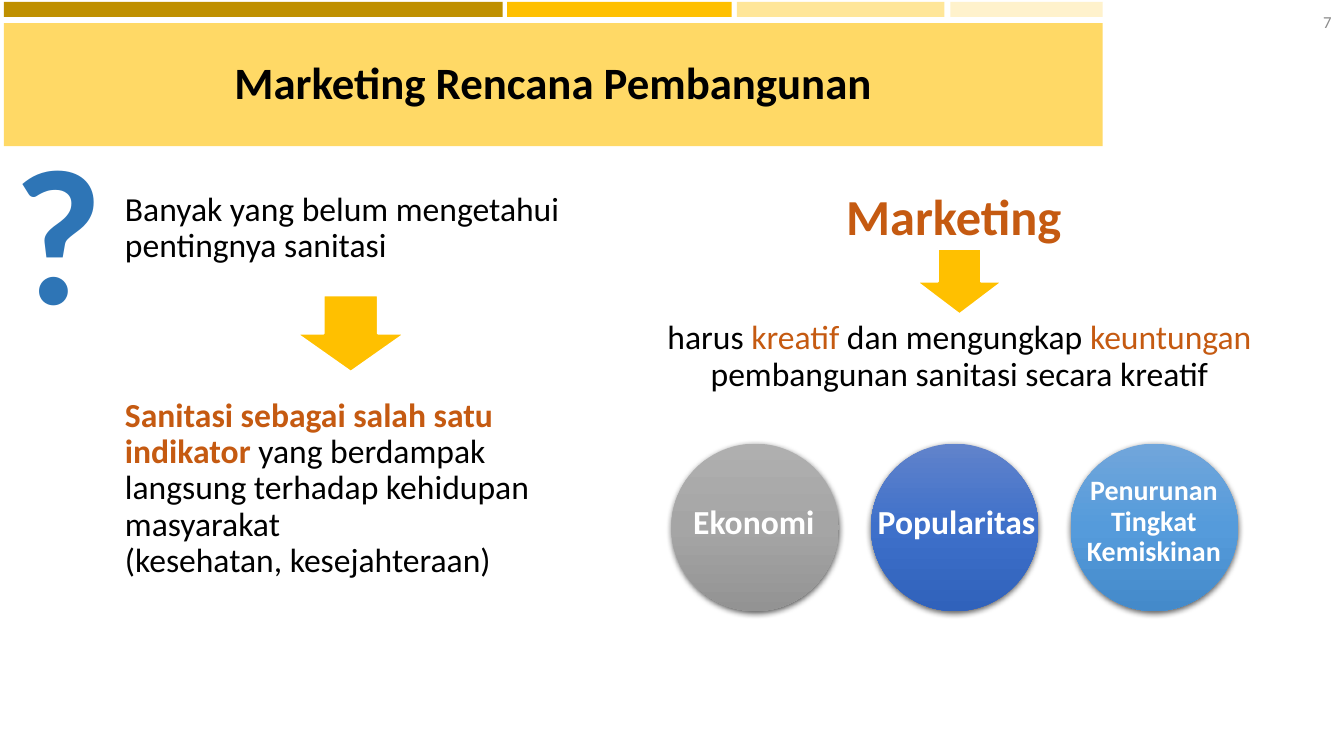
from dataclasses import dataclass

from lxml import etree
from pptx import Presentation
from pptx.dml.color import RGBColor
from pptx.enum.shapes import MSO_SHAPE
from pptx.enum.text import MSO_ANCHOR, MSO_AUTO_SIZE, PP_ALIGN
from pptx.oxml.ns import qn
from pptx.shapes.autoshape import Shape
from pptx.slide import Slide
from pptx.text.text import TextFrame
from pptx.util import Cm, Pt

RECTANGLE, ELLIPSE, DOWN_ARROW = MSO_SHAPE.RECTANGLE, MSO_SHAPE.OVAL, MSO_SHAPE.DOWN_ARROW
LEFT, CENTER, RIGHT = PP_ALIGN.LEFT, PP_ALIGN.CENTER, PP_ALIGN.RIGHT
TOP, MIDDLE = MSO_ANCHOR.TOP, MSO_ANCHOR.MIDDLE
FIXED_SIZE = MSO_AUTO_SIZE.NONE

FONT = "Calibri"
BLACK = RGBColor(0x00, 0x00, 0x00)
WHITE = RGBColor(0xFF, 0xFF, 0xFF)
GREY = RGBColor(0x8C, 0x8C, 0x8C)
BLUE = RGBColor(0x2E, 0x75, 0xB6)
ORANGE = RGBColor(0xC5, 0x5A, 0x11)
DARK_GOLD = RGBColor(0xBF, 0x90, 0x00)
GOLD = RGBColor(0xFF, 0xC0, 0x00)
SOFT_GOLD = RGBColor(0xFF, 0xD9, 0x66)
PALE_GOLD = RGBColor(0xFF, 0xE6, 0x99)
CREAM = RGBColor(0xFF, 0xF2, 0xCC)
GREYS = (RGBColor(0xAF, 0xAF, 0xAF), RGBColor(0xA5, 0xA5, 0xA5), RGBColor(0x93, 0x93, 0x93))
ROYAL_BLUES = (RGBColor(0x61, 0x83, 0xCB), RGBColor(0x3E, 0x70, 0xCA), RGBColor(0x30, 0x62, 0xBB))
SKY_BLUES = (RGBColor(0x71, 0xA6, 0xDB), RGBColor(0x55, 0x9B, 0xDB), RGBColor(0x44, 0x8A, 0xCA))


@dataclass(frozen=True)
class Box:
    left: float
    top: float
    width: float
    height: float


@dataclass(frozen=True)
class Phrase:
    text: str
    size: float = 24
    color: RGBColor = BLACK
    bold: bool = False


@dataclass(frozen=True)
class Line:
    phrases: tuple[Phrase, ...]
    align: PP_ALIGN = LEFT
    space_before: float = 0
    spacing: float = 0.9


@dataclass(frozen=True)
class Passage:
    box: Box
    lines: tuple[Line, ...]
    anchor: MSO_ANCHOR = TOP
    wrap: bool = True


@dataclass(frozen=True)
class Stripe:
    left: float
    width: float
    color: RGBColor


@dataclass(frozen=True)
class Benefit:
    label: Phrase
    label_box: Box
    align: PP_ALIGN
    shades: tuple[RGBColor, RGBColor, RGBColor]


TITLE_BOX = Box(0.1, 0.58, 27.69, 3.1)
TITLE = Line((Phrase("Marketing Rencana Pembangunan", 32, BLACK, True),), CENTER)

STRIPE_TOP, STRIPE_HEIGHT = 0.05, 0.38
STRIPES = (
    Stripe(0.1, 12.57, DARK_GOLD),
    Stripe(12.78, 5.66, GOLD),
    Stripe(18.57, 5.23, PALE_GOLD),
    Stripe(23.95, 3.84, CREAM),
)

PASSAGES = (
    Passage(Box(26.19, 0.05, 7.62, 1.02),
            (Line((Phrase("7", 12, GREY),), RIGHT, spacing=1),), MIDDLE),
    Passage(Box(2.9, 4.72, 11.91, 2.11),
            (Line((Phrase("Banyak yang belum mengetahui pentingnya sanitasi"),)),)),
    Passage(Box(0.1, 2.69, 2.79, 6.15),
            (Line((Phrase("?", 138, BLUE, True),), spacing=1),), wrap=False),
    Passage(Box(2.9, 9.91, 11.91, 4.88), (
        Line((Phrase("Sanitasi sebagai salah satu indikator ", color=ORANGE, bold=True),
              Phrase("yang berdampak langsung terhadap kehidupan masyarakat"))),
        Line((Phrase("(kesehatan, kesejahteraan)"),)),
    )),
    Passage(Box(15.24, 4.72, 17.88, 5.69), (
        Line((Phrase("Marketing ", 36, ORANGE, True),), CENTER),
        Line((Phrase("harus "), Phrase("kreatif ", color=ORANGE),
              Phrase("dan mengungkap "), Phrase("keuntungan ", color=ORANGE),
              Phrase("pembangunan sanitasi secara kreatif")), CENTER, space_before=53),
    )),
)

ARROWS = (Box(7.47, 7.44, 2.74, 1.93), Box(23.09, 6.27, 2.18, 1.65))

CIRCLE_LEFT, CIRCLE_TOP, CIRCLE_SIZE, CIRCLE_STEP = 16.92, 11.18, 4.22, 5.03
BENEFITS = (
    Benefit(Phrase("Ekonomi", 24, WHITE, True), Box(17.22, 12.6, 3.61, 2.11), LEFT, GREYS),
    Benefit(Phrase("Popularitas", 24, WHITE, True), Box(21.87, 12.6, 4.72, 2.11), LEFT, ROYAL_BLUES),
    Benefit(Phrase("Penurunan Tingkat Kemiskinan", 20, WHITE, True),
            Box(26.72, 11.89, 4.72, 2.11), CENTER, SKY_BLUES),
)


def lengths(box: Box) -> tuple[Cm, Cm, Cm, Cm]:
    return Cm(box.left), Cm(box.top), Cm(box.width), Cm(box.height)


def write_lines(frame: TextFrame, lines: tuple[Line, ...]) -> None:
    for index, line in enumerate(lines):
        paragraph = frame.add_paragraph() if index else frame.paragraphs[0]
        paragraph.alignment = line.align
        paragraph.line_spacing = line.spacing
        paragraph.space_before = Pt(line.space_before)
        for phrase in line.phrases:
            run = paragraph.add_run()
            run.text = phrase.text
            run.font.name = FONT
            run.font.size = Pt(phrase.size)
            run.font.bold = phrase.bold
            run.font.color.rgb = phrase.color


def add_passage(slide: Slide, passage: Passage) -> None:
    frame = slide.shapes.add_textbox(*lengths(passage.box)).text_frame
    frame.word_wrap = passage.wrap
    frame.vertical_anchor = passage.anchor
    write_lines(frame, passage.lines)


def add_figure(slide: Slide, kind: MSO_SHAPE, box: Box, color: RGBColor) -> Shape:
    figure = slide.shapes.add_shape(kind, *lengths(box))
    figure.shadow.inherit = False
    figure.fill.solid()
    figure.fill.fore_color.rgb = color
    figure.line.fill.background()
    return figure


def add_arrow(slide: Slide, box: Box) -> None:
    arrow = add_figure(slide, DOWN_ARROW, box, GOLD)
    arrow.line.color.rgb = WHITE
    arrow.line.width = Pt(1.5)


def add_color(parent: etree._Element, color: RGBColor) -> etree._Element:
    return etree.SubElement(parent, qn("a:srgbClr"), val=str(color))


def add_benefit(slide: Slide, benefit: Benefit, left: float) -> None:
    circle = add_figure(slide, ELLIPSE, Box(left, CIRCLE_TOP, CIRCLE_SIZE, CIRCLE_SIZE),
                        benefit.shades[1])
    circle.fill.gradient()
    circle.fill.gradient_angle = 270
    properties = circle._element.spPr
    stops = properties.find(qn("a:gradFill")).find(qn("a:gsLst"))
    for stop in list(stops):
        stops.remove(stop)
    for index, shade in enumerate(benefit.shades):
        add_color(etree.SubElement(stops, qn("a:gs"), pos=str(index * 50000)), shade)
    shadow = etree.SubElement(properties.find(qn("a:effectLst")), qn("a:outerShdw"),
                              blurRad=str(Pt(4.5)), dist=str(Pt(1.5)),
                              dir="5400000", algn="ctr", rotWithShape="0")
    etree.SubElement(add_color(shadow, BLACK), qn("a:alpha"), val="63000")
    add_passage(slide, Passage(benefit.label_box, (Line((benefit.label,), benefit.align),)))


def add_title(slide: Slide) -> None:
    title = slide.shapes.title
    title.left, title.top, title.width, title.height = lengths(TITLE_BOX)
    title.fill.solid()
    title.fill.fore_color.rgb = SOFT_GOLD
    title.text_frame.auto_size = FIXED_SIZE
    title.text_frame.vertical_anchor = MIDDLE
    write_lines(title.text_frame, (TITLE,))


def main() -> None:
    presentation = Presentation()
    presentation.slide_width, presentation.slide_height = Cm(33.87), Cm(19.05)
    slide = presentation.slides.add_slide(presentation.slide_layouts[5])
    add_title(slide)
    for stripe in STRIPES:
        add_figure(slide, RECTANGLE,
                   Box(stripe.left, STRIPE_TOP, stripe.width, STRIPE_HEIGHT), stripe.color)
    for passage in PASSAGES:
        add_passage(slide, passage)
    for arrow_box in ARROWS:
        add_arrow(slide, arrow_box)
    for index, benefit in enumerate(BENEFITS):
        add_benefit(slide, benefit, CIRCLE_LEFT + index * CIRCLE_STEP)
    presentation.save("out.pptx")


if __name__ == "__main__":
    main()
